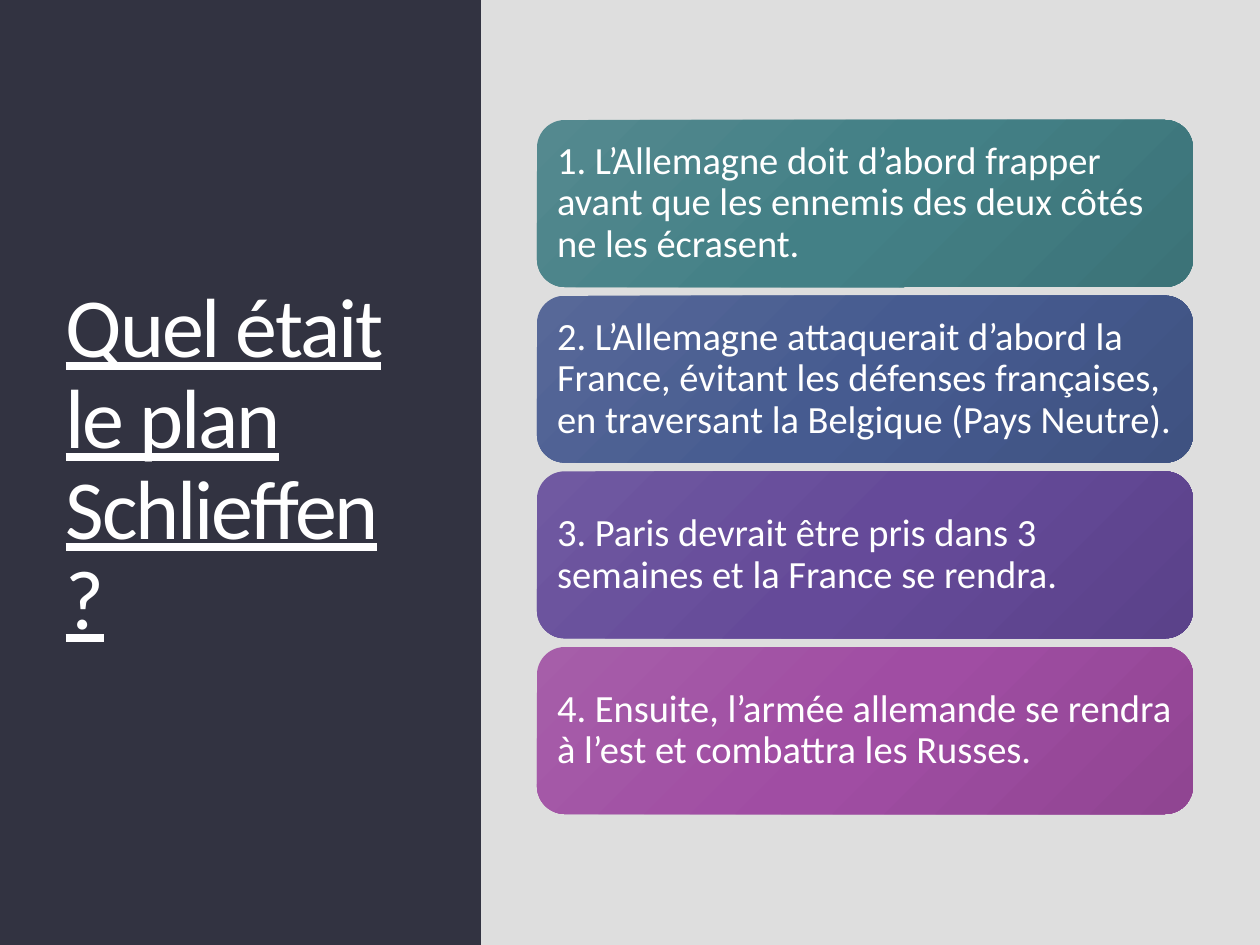
import copy
import pptx
import pptx.util
import pptx.dml.color
import pptx.enum.shapes
import pptx.enum.text

TITLE = "Quel était le plan Schlieffen ?"
CARDS = [
    ("1. L’Allemagne doit d’abord frapper avant que les ennemis des deux côtés ne les écrasent.", "teal"),
    ("2. L’Allemagne attaquerait d’abord la France, évitant les défenses françaises, en traversant la Belgique (Pays Neutre).", "blue"),
    ("3. Paris devrait être pris dans 3 semaines et la France se rendra.", "violet"),
    ("4. Ensuite, l’armée allemande se rendra à l’est et combattra les Russes.", "pink"),
]
COLORS = {"back": "DEDEDE", "panel": "323341", "text": "FFFFFF"}
FADES = {
    "teal": ("54898F", "438086", "3C7378"),
    "blue": ("576898", "465B90", "3F5281"),
    "violet": ("7059A1", "654A99", "5B428A"),
    "pink": ("A65EA9", "A04DA3", "904592"),
}
FONT = "Calibri"
WIDE, HIGH = 1260, 945
PANEL = 481
HEAD = (53, 88, 389, 757)
LEFT, TOP, BOTTOM = 537, 120, 814
CARD_W, CARD_H = 656, 167
INSET = 12
GAP = (BOTTOM - TOP - CARD_H * len(CARDS)) / (len(CARDS) - 1)


def px(n):
    return pptx.util.Emu(round(n * 914400 / 126))


def rgb(code):
    return pptx.dml.color.RGBColor.from_string(code)


def write(frame, text, size):
    frame.word_wrap = True
    frame.auto_size = pptx.enum.text.MSO_AUTO_SIZE.NONE
    frame.vertical_anchor = pptx.enum.text.MSO_ANCHOR.MIDDLE
    para = frame.paragraphs[0]
    para.text = text
    para.alignment = pptx.enum.text.PP_ALIGN.LEFT
    para.line_spacing = 0.9
    para.font.name = FONT
    para.font.size = pptx.util.Pt(size)
    para.font.color.rgb = rgb(COLORS["text"])
    return para


def add_box(slide, kind, x, y, w, h):
    box = slide.shapes.add_shape(kind, px(x), px(y), px(w), px(h))
    box.shadow.inherit = False
    box.line.fill.background()
    return box


def fade(fill, codes):
    fill.gradient()
    fill.gradient_angle = 315
    first = fill._xPr.gradFill.gsLst[0]
    first.addnext(copy.deepcopy(first))
    for i, (stop, code) in enumerate(zip(fill.gradient_stops, codes)):
        stop.color.rgb = rgb(code)
        stop.position = i / 2


def main():
    deck = pptx.Presentation()
    deck.slide_width, deck.slide_height = px(WIDE), px(HIGH)
    slide = deck.slides.add_slide(deck.slide_layouts[5])
    slide.background.fill.solid()
    slide.background.fill.fore_color.rgb = rgb(COLORS["back"])
    shapes = pptx.enum.shapes.MSO_SHAPE

    panel = add_box(slide, shapes.RECTANGLE, 0, 0, PANEL, HIGH)
    panel.fill.solid()
    panel.fill.fore_color.rgb = rgb(COLORS["panel"])

    title = slide.shapes.title
    title.left, title.top, title.width, title.height = map(px, HEAD)
    para = write(title.text_frame, TITLE, 48)
    para.font.underline = True
    para.runs[0]._r.get_or_add_rPr().set("spc", "-120")
    panel._element.addnext(title._element)

    for i, (text, hue) in enumerate(CARDS):
        y = TOP + i * (CARD_H + GAP)
        card = add_box(slide, shapes.ROUNDED_RECTANGLE, LEFT, y, CARD_W, CARD_H)
        fade(card.fill, FADES[hue])
        frame = card.text_frame
        frame.margin_left = frame.margin_right = px(INSET)
        frame.margin_top = frame.margin_bottom = px(INSET)
        write(frame, text, 22)

    deck.save("out.pptx")


if __name__ == "__main__":
    main()
